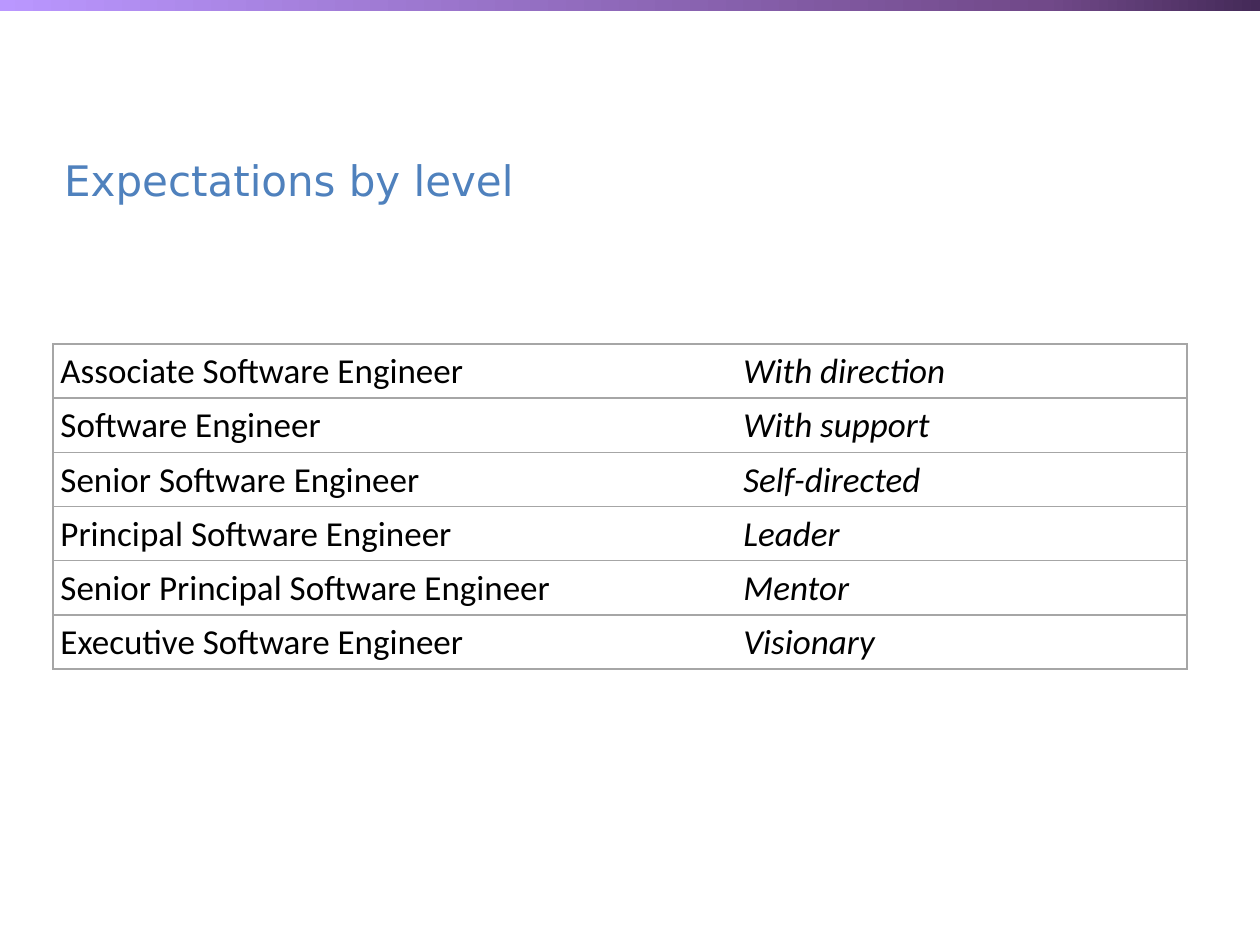
import copy

import pptx
import pptx.dml.color
import pptx.enum.shapes
import pptx.enum.text
import pptx.oxml
import pptx.oxml.ns
import pptx.util


def color(value):
    return pptx.dml.color.RGBColor.from_string(value)


class LevelPage:
    COLUMNS, ROWS = 100, 75
    TITLE_FONT, TITLE_SIZE, TITLE_COLOR = "DejaVu Sans", 24, "4F81BD"
    BODY_FONT, BODY_SIZE, BODY_COLOR = "Calibri", 20, "000000"
    BORDER_COLOR, BORDER_WIDTH = "A6A6A6", 1

    def __init__(self, deck):
        self.page = deck.slides.add_slide(deck.slide_layouts[6])
        self.column = deck.slide_width / self.COLUMNS
        self.row = deck.slide_height / self.ROWS

    def place(self, left, top, width, height):
        return (round(left * self.column), round(top * self.row),
                round(width * self.column), round(height * self.row))

    def add_span(self, para, text, font, size, value, italic=False):
        span = para.add_run()
        span.text = text
        span.font.name = font
        span.font.size = pptx.util.Pt(size)
        span.font.color.rgb = color(value)
        span.font.bold = False
        span.font.italic = italic

    def gradient_bar(self, area, stops, angle):
        bar = self.page.shapes.add_shape(
            pptx.enum.shapes.MSO_SHAPE.RECTANGLE, *self.place(*area))
        bar.shadow.inherit = False
        bar.line.fill.background()
        bar.fill.gradient()
        bar.fill.gradient_angle = angle
        stop_list = bar._element.spPr.find(".//" + pptx.oxml.ns.qn("a:gsLst"))
        while len(stop_list) < len(stops):
            stop_list.append(copy.deepcopy(stop_list[-1]))
        for stop, (position, value) in zip(bar.fill.gradient_stops, stops):
            stop.position = position
            stop.color.rgb = color(value)

    def title(self, area, text):
        box = self.page.shapes.add_textbox(*self.place(*area))
        frame = box.text_frame
        frame.word_wrap = True
        frame.vertical_anchor = pptx.enum.text.MSO_ANCHOR.MIDDLE
        frame.margin_left = frame.margin_right = 0
        frame.margin_top = frame.margin_bottom = 0
        self.add_span(frame.paragraphs[0], text,
                      self.TITLE_FONT, self.TITLE_SIZE, self.TITLE_COLOR)

    def borders(self, cell, visible):
        properties = cell._tc.get_or_add_tcPr()
        width = pptx.util.Pt(self.BORDER_WIDTH)
        for index, side in enumerate("LRTB"):
            paint = "<a:noFill/>"
            if side in visible:
                paint = (f'<a:solidFill><a:srgbClr val="{self.BORDER_COLOR}"/>'
                         "</a:solidFill>")
            properties.insert(index, pptx.oxml.parse_xml(
                f'<a:ln{side} {pptx.oxml.ns.nsdecls("a")} w="{width}">'
                f"{paint}</a:ln{side}>"))

    def fill_cell(self, cell, text, italic, visible):
        cell.margin_left = cell.margin_right = pptx.util.Inches(0.06)
        cell.margin_top = cell.margin_bottom = 0
        cell.fill.background()
        self.borders(cell, visible)
        para = cell.text_frame.paragraphs[0]
        para.line_spacing = 1.15
        self.add_span(para, text, self.BODY_FONT, self.BODY_SIZE,
                      self.BODY_COLOR, italic)

    def table(self, area, widths, records):
        grid = self.page.shapes.add_table(
            len(records), len(widths), *self.place(*area)).table
        grid.first_row = grid.horz_banding = False
        for column, width in zip(grid.columns, widths):
            column.width = round(width * self.column)
        for row, (level, expectation) in zip(grid.rows, records):
            self.fill_cell(row.cells[0], level, False, "LTB")
            self.fill_cell(row.cells[1], expectation, True, "RTB")


def main():
    deck = pptx.Presentation()
    deck.slide_width = pptx.util.Inches(10)
    deck.slide_height = pptx.util.Inches(7.5)
    page = LevelPage(deck)
    page.gradient_bar((-0.2, -0.2, 100.2, 1.1),
                      [(0, "442A58"), (0.17, "714989"), (1, "BA97FF")], 180)
    page.title((5.1, 12.3, 58.3, 4), "Expectations by level")
    page.table((4.2, 27.3, 90, 25.8), (54.2, 35.8), [
        ("Associate Software Engineer", "With direction"),
        ("Software Engineer", "With support"),
        ("Senior Software Engineer", "Self-directed"),
        ("Principal Software Engineer", "Leader"),
        ("Senior Principal Software Engineer", "Mentor"),
        ("Executive Software Engineer", "Visionary"),
    ])
    deck.save("out.pptx")


if __name__ == "__main__":
    main()
